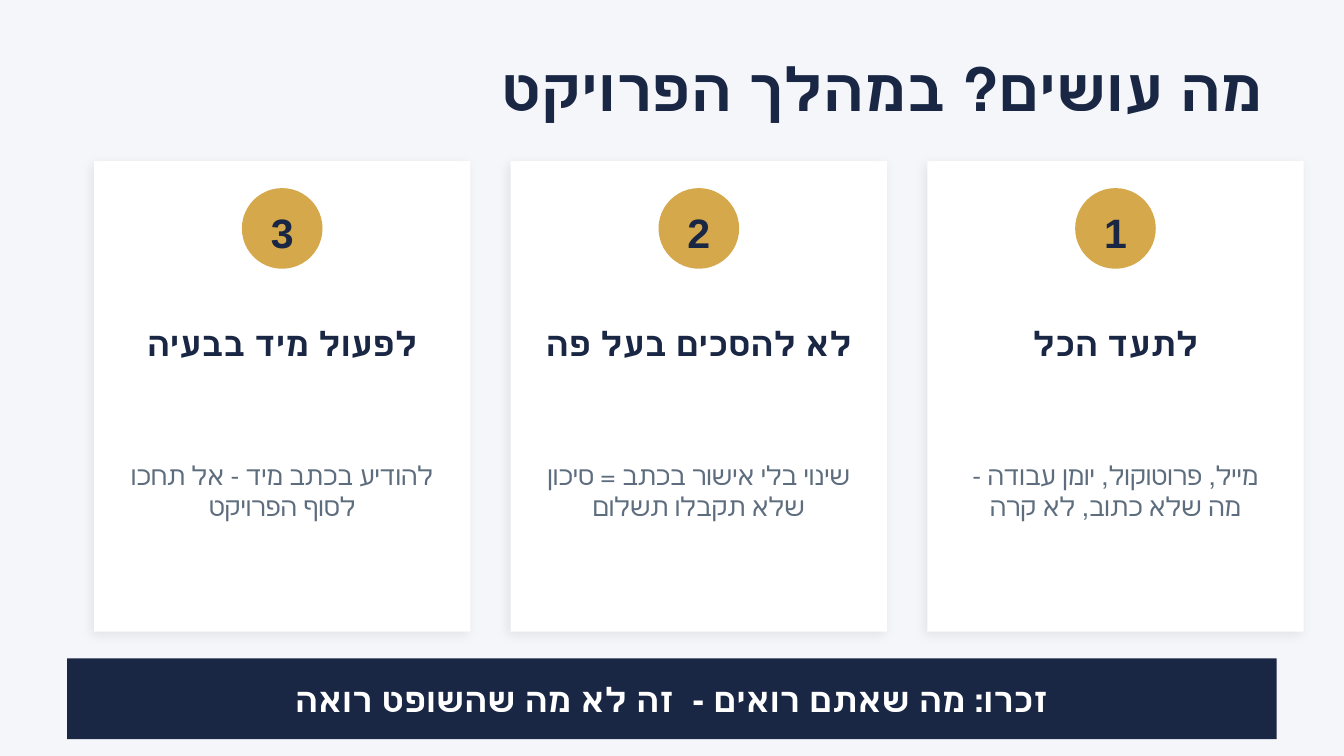
from lxml.etree import SubElement
from pptx import Presentation
from pptx.dml.color import RGBColor
from pptx.enum.shapes import MSO_SHAPE
from pptx.enum.text import MSO_ANCHOR, PP_ALIGN
from pptx.oxml.ns import qn
from pptx.util import Inches, Pt

COLORS = {
    "background": "F5F6FA",
    "navy": "1A2744",
    "gold": "D4A84B",
    "gray": "5D6D7E",
    "white": "FFFFFF",
    "shadow": "000000",
}
CELL = 0.1
CARD_WIDTH, CARD_GAP, CARDS_LEFT = 28, 3, 7

CARDS = [
    ("לתעד הכל", "מייל, פרוטוקול, יומן עבודה - מה שלא כתוב, לא קרה"),
    ("לא להסכים בעל פה", "שינוי בלי אישור בכתב = סיכון שלא תקבלו תשלום"),
    ("לפעול מיד בבעיה", "להודיע בכתב מיד - אל תחכו לסוף הפרויקט"),
]


class SlideBuilder:
    font = "Arial"

    def __init__(self, prs):
        self.s = prs.slides.add_slide(prs.slide_layouts[6])
        fill = self.s.background.fill
        fill.solid()
        fill.fore_color.rgb = self.color("background")

    def color(self, name):
        return RGBColor.from_string(COLORS[name])

    def grid(self, *cells):
        return [Inches(cell * CELL) for cell in cells]

    def shape(self, kind, box, color):
        sp = self.s.shapes.add_shape(kind, *self.grid(*box))
        sp.shadow.inherit = False
        sp.fill.solid()
        sp.fill.fore_color.rgb = self.color(color)
        sp.line.fill.background()
        return sp

    def soft_shadow(self, sp):
        effects = sp._element.spPr.find(qn("a:effectLst"))
        shadow = SubElement(
            effects, qn("a:outerShdw"), blurRad=str(Pt(6)), dist=str(Pt(2)),
            dir=str(135 * 60000), algn="bl", rotWithShape="0")
        color = SubElement(shadow, qn("a:srgbClr"), val=COLORS["shadow"])
        SubElement(color, qn("a:alpha"), val="8000")

    def text(self, text, box, size, color, bold=True, align=PP_ALIGN.CENTER, rtl=True):
        tf = self.s.shapes.add_textbox(*self.grid(*box)).text_frame
        tf.word_wrap = True
        tf.vertical_anchor = MSO_ANCHOR.MIDDLE
        p = tf.paragraphs[0]
        p.text = text
        p.alignment = align
        p.font.size = Pt(size)
        p.font.bold = bold
        p.font.color.rgb = self.color(color)
        p.font.name = self.font
        if rtl:
            p._p.get_or_add_pPr().set("rtl", "1")

    def card(self, left, number, heading, body):
        self.soft_shadow(self.shape(MSO_SHAPE.RECTANGLE, (left, 12, CARD_WIDTH, 35), "white"))
        badge_left = left + (CARD_WIDTH - 6) / 2
        self.shape(MSO_SHAPE.OVAL, (badge_left, 14, 6, 6), "gold")
        self.text(str(number), (badge_left, 14.5, 6, 5.5), 22, "navy", rtl=False)
        text_left, text_width = left + 1.5, CARD_WIDTH - 3
        self.text(heading, (text_left, 22, text_width, 7), 18, "navy")
        self.text(body, (text_left, 29, text_width, 15), 14, "gray", bold=False)

    def banner(self, text):
        self.shape(MSO_SHAPE.RECTANGLE, (5, 49, 90, 6), "navy")
        self.text(text, (5, 50, 90, 4), 18, "white")


def main():
    prs = Presentation()
    prs.slide_width = Inches(10)
    prs.slide_height = prs.slide_width * 9 // 16
    slide = SlideBuilder(prs)
    slide.text("מה עושים? במהלך הפרויקט", (5, 3, 90, 7), 32, "navy", align=PP_ALIGN.RIGHT)
    for i, (heading, body) in enumerate(CARDS):
        column = len(CARDS) - 1 - i
        slide.card(CARDS_LEFT + column * (CARD_WIDTH + CARD_GAP), i + 1, heading, body)
    slide.banner("זכרו: מה שאתם רואים -  זה לא מה שהשופט רואה")
    prs.save("out.pptx")


if __name__ == "__main__":
    main()
